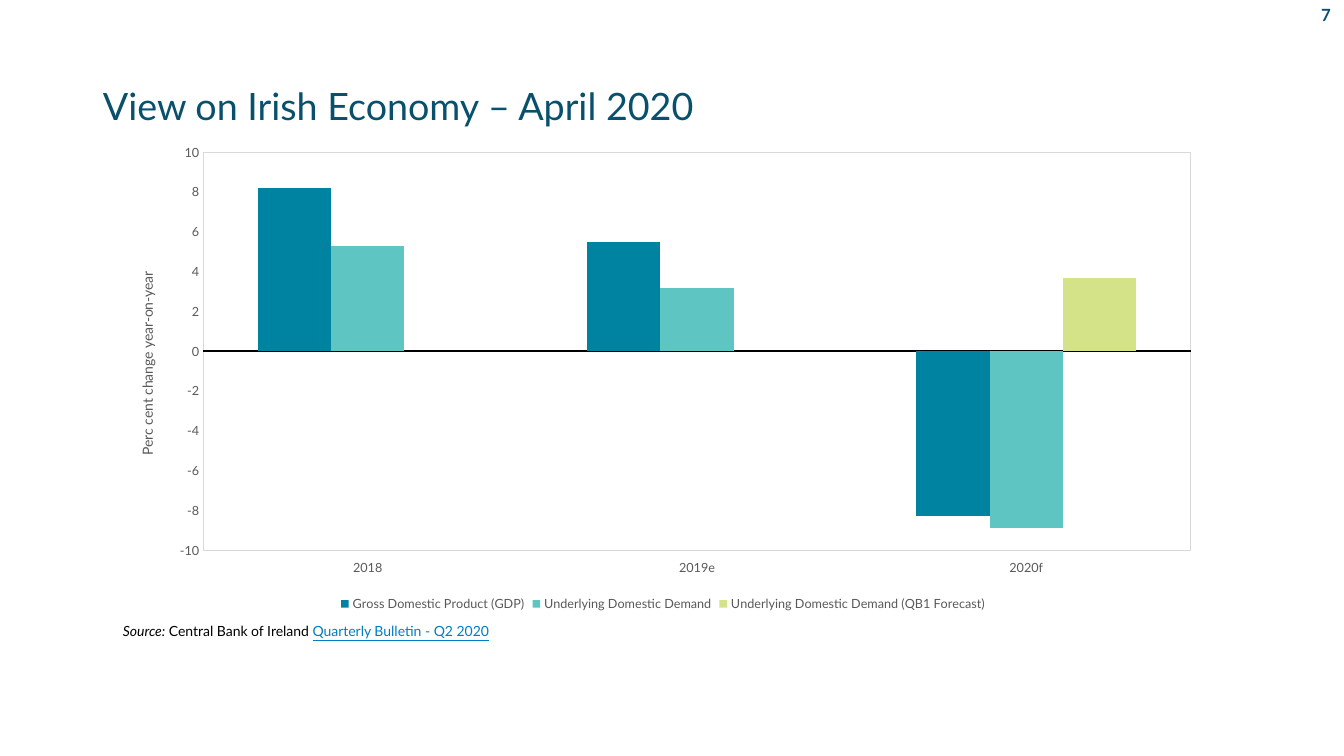
import pptx
import pptx.chart.data
import pptx.dml.color
import pptx.enum.chart
import pptx.enum.text
import pptx.oxml
import pptx.util
from pptx.util import Inches

FONT = "Lato"
NAVY, GREY, BLACK, LINK = "09506C", "595959", "000000", "007DC3"
YEARS = ["2018", "2019e", "2020f"]
SERIES = [
    ("Gross Domestic Product (GDP)", [8.2, 5.5, -8.3], "0083A0"),
    ("Underlying Domestic Demand", [5.3, 3.2, -8.9], "5EC5C2"),
    ("Underlying Domestic Demand (QB1 Forecast)", [None, None, 3.7], "D4E388"),
]


def rgb(color):
    return pptx.dml.color.RGBColor.from_string(color)


def style(font, size, color, bold=False, italic=False):
    font.name = FONT
    font.size = pptx.util.Pt(size)
    font.color.rgb = rgb(color)
    font.bold = bold
    font.italic = italic


def chart_xml(body):
    ns = ('xmlns:c="http://schemas.openxmlformats.org/drawingml/2006/chart" '
          'xmlns:a="http://schemas.openxmlformats.org/drawingml/2006/main"')
    tag, rest = body.split(">", 1)
    return pptx.oxml.parse_xml(f"{tag} {ns}>{rest}")


def manual_layout(x, y, size=None):
    """Layout in fractions of the chart; size also fixes the inner plot."""
    target = '<c:layoutTarget val="inner"/>' if size else ""
    extent = f'<c:w val="{size[0]}"/><c:h val="{size[1]}"/>' if size else ""
    return chart_xml(
        f'<c:layout><c:manualLayout>{target}<c:xMode val="edge"/><c:yMode val="edge"/>'
        f'<c:x val="{x}"/><c:y val="{y}"/>{extent}</c:manualLayout></c:layout>')


def add_title(s, box, text):
    sp = s.shapes.title
    sp.left, sp.top, sp.width, sp.height = box
    tf = sp.text_frame
    tf.text = text
    tf.vertical_anchor = pptx.enum.text.MSO_ANCHOR.MIDDLE
    p = tf.paragraphs[0]
    p.alignment = pptx.enum.text.PP_ALIGN.LEFT
    style(p.runs[0].font, 26.9, NAVY)


def add_page_number(s, box, number):
    tf = s.shapes.add_textbox(*box).text_frame
    tf.word_wrap = True
    tf.margin_right = Inches(0.05)
    tf.text = number
    p = tf.paragraphs[0]
    p.alignment = pptx.enum.text.PP_ALIGN.RIGHT
    style(p.runs[0].font, 12, NAVY, bold=True)


def add_source(s, box):
    tf = s.shapes.add_textbox(*box).text_frame
    tf.word_wrap = True
    p = tf.paragraphs[0]
    for text, color, italic in [("Source:", BLACK, True),
                                (" Central Bank of Ireland ", BLACK, False),
                                ("Quarterly Bulletin - Q2 2020", LINK, False)]:
        r = p.add_run()
        r.text = text
        style(r.font, 10, color, italic=italic)
        r.font.underline = color == LINK


def format_axes(chart):
    cat, val = chart.category_axis, chart.value_axis
    for axis in (cat, val):
        axis.major_tick_mark = pptx.enum.chart.XL_TICK_MARK.NONE
        axis.minor_tick_mark = pptx.enum.chart.XL_TICK_MARK.NONE
        axis.has_major_gridlines = False
        style(axis.tick_labels.font, 9, GREY)
    cat.tick_label_position = pptx.enum.chart.XL_TICK_LABEL_POSITION.LOW
    cat.format.line.color.rgb = rgb(BLACK)
    cat.format.line.width = pptx.util.Pt(1.25)
    val.format.line.fill.background()
    val.minimum_scale, val.maximum_scale, val.major_unit = -10, 10, 2
    val.tick_labels.number_format = "General"
    val.tick_labels.number_format_is_linked = False
    tf = val.axis_title.text_frame
    tf.text = "Perc cent change year-on-year"
    style(tf.paragraphs[0].runs[0].font, 10, GREY)
    title = val.axis_title._element
    for old in title.findall("{*}layout"):
        title.remove(old)
    title.find("{*}tx").addnext(manual_layout(0.02, 0.28))


def add_growth_chart(s, box):
    data = pptx.chart.data.CategoryChartData()
    data.categories = YEARS
    for name, values, _ in SERIES:
        data.add_series(name, values)
    kind = pptx.enum.chart.XL_CHART_TYPE.COLUMN_CLUSTERED
    chart = s.shapes.add_chart(kind, *box, data).chart
    style(chart.font, 10, BLACK)
    chart.has_title = False
    plot = chart.plots[0]
    plot.gap_width, plot.overlap = 150, 0
    plot.vary_by_categories = False
    for series, (_, _, color) in zip(plot.series, SERIES):
        series.invert_if_negative = False
        series.format.fill.solid()
        series.format.fill.fore_color.rgb = rgb(color)
    format_axes(chart)

    chart.has_legend = True
    chart.legend.position = pptx.enum.chart.XL_LEGEND_POSITION.BOTTOM
    chart.legend.include_in_layout = False
    style(chart.legend.font, 9, GREY)

    area = chart._chartSpace.chart.plotArea
    for old in area.findall("{*}layout"):
        area.remove(old)
    area.insert(0, manual_layout(0.082, 0.038, (0.898, 0.826)))
    area.append(chart_xml(
        '<c:spPr><a:noFill/><a:ln w="9525"><a:solidFill><a:srgbClr val="D9D9D9"/>'
        '</a:solidFill></a:ln></c:spPr>'))


def main():
    prs = pptx.Presentation()
    prs.slide_width, prs.slide_height = Inches(13.33), Inches(7.5)
    s = prs.slides.add_slide(prs.slide_layouts[5])
    add_page_number(s, map(Inches, (12.79, 0, 0.46, 0.34)), "7")
    add_title(s, map(Inches, (0.92, 0.75, 10.78, 0.59)),
              "View on Irish Economy – April 2020")
    add_source(s, map(Inches, (1.12, 6.13, 4.29, 0.27)))
    add_growth_chart(s, map(Inches, (1.12, 1.33, 10.91, 4.78)))
    prs.save("out.pptx")


if __name__ == "__main__":
    main()
